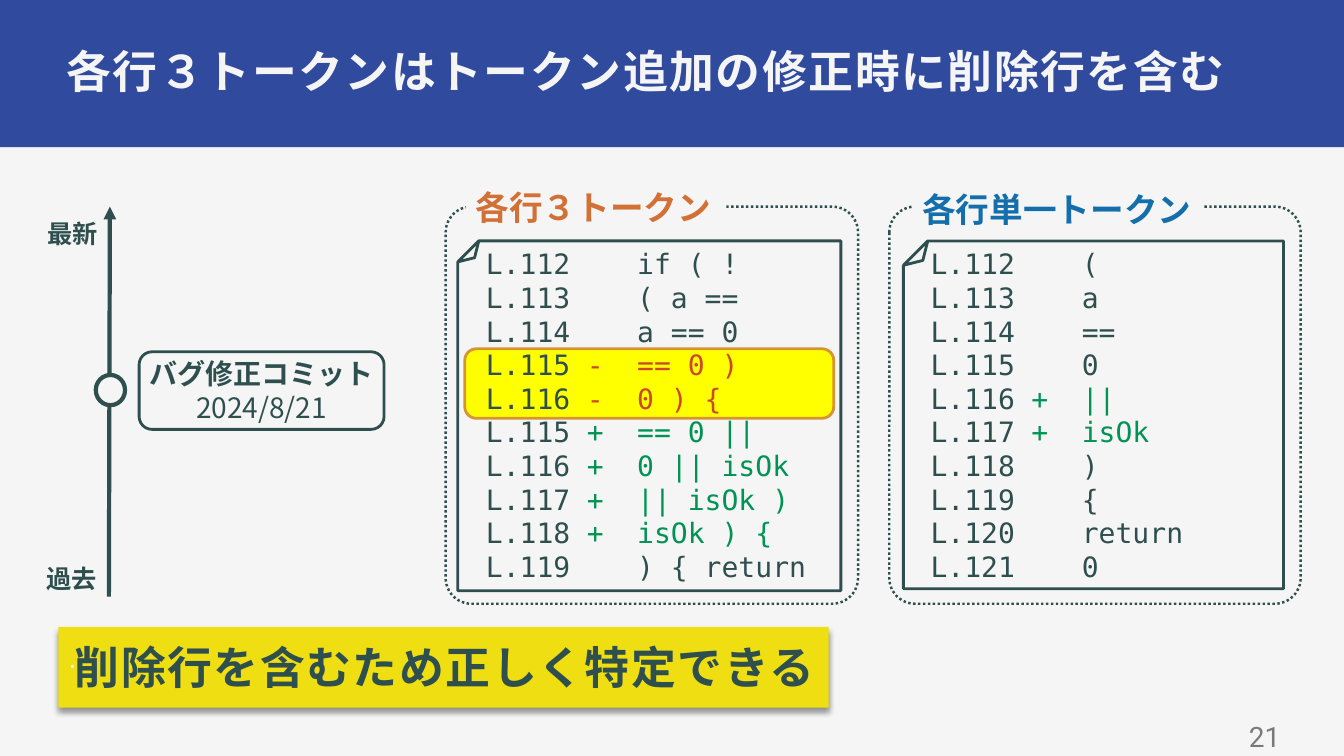
"""Build the slide comparing three-token lines with single-token lines in a bug-fix commit."""
from dataclasses import dataclass

from lxml import etree
from pptx import Presentation
from pptx.dml.color import RGBColor
from pptx.enum.dml import MSO_LINE_DASH_STYLE as Dash
from pptx.enum.shapes import MSO_CONNECTOR as Conn, MSO_SHAPE as Kind
from pptx.enum.text import MSO_ANCHOR as Anchor, MSO_AUTO_SIZE as AutoSize, PP_ALIGN as Align
from pptx.oxml.ns import qn
from pptx.util import Pt

PX = 9144
Box = tuple[int, int, int, int]


@dataclass(frozen=True)
class Theme:
    paper: str = "F5F5F5"
    ink: str = "2F4F4F"
    banner: str = "304A9E"
    note: str = "EEDE12"
    mark: str = "FFFF00"
    mark_line: str = "D59533"
    removed: str = "CB4828"
    added: str = "009353"
    orange: str = "D27136"
    blue: str = "136EAB"
    gray: str = "7A7A7A"
    sans: str = "Roboto"
    cjk: str = "Noto Sans CJK JP"
    mono: str = "DejaVu Sans Mono"
    heading: int = 32
    label: int = 24
    code: int = 20
    small: int = 18
    tracking: int = 110


T = Theme()
SIGN_COLORS = {"": T.ink, "-": T.removed, "+": T.added}


@dataclass(frozen=True)
class Line:
    number: int
    code: str
    sign: str = ""


@dataclass(frozen=True)
class Panel:
    title: str
    color: str
    title_box: Box
    frame: Box
    page: Box
    fold: float
    code_box: Box
    lines: tuple[Line, ...]


PANELS = (
    Panel("各行３トークン", T.orange, (462, 181, 256, 50), (442, 205, 409, 394),
          (454, 239, 380, 347), 0.06, (455, 240, 366, 347), (
              Line(112, "if ( !"), Line(113, "( a =="), Line(114, "a == 0"),
              Line(115, "== 0 )", "-"), Line(116, "0 ) {", "-"),
              Line(115, "== 0 ||", "+"), Line(116, "0 || isOk", "+"),
              Line(117, "|| isOk )", "+"), Line(118, "isOk ) {", "+"),
              Line(119, ") { return"))),
    Panel("各行単一トークン", T.blue, (905, 183, 289, 50), (882, 205, 408, 394),
          (896, 239, 377, 345), 0.07, (896, 240, 370, 347), (
              Line(112, "("), Line(113, "a"), Line(114, "=="), Line(115, "0"),
              Line(116, "||", "+"), Line(117, "isOk", "+"), Line(118, ")"),
              Line(119, "{"), Line(120, "return"), Line(121, "0"))),
)
TIMES = (("最新", (37, 212, 71, 40)), ("過去", (36, 554, 71, 40)))


def rgb(color: str) -> RGBColor:
    return RGBColor.from_string(color)


def emu(box: Box) -> list[int]:
    return [v * PX for v in box]


def sub(parent, tag: str, **attrs):
    return etree.SubElement(parent, qn(tag), {k: str(v) for k, v in attrs.items()})


def add_run(p, text: str, *, size: int, color: str = T.ink, font: str = T.cjk,
            bold: bool = False, tracking: int = 0) -> None:
    r = p.add_run()
    r.text = text
    r.font.size, r.font.bold, r.font.name = Pt(size), bold, font
    r.font.color.rgb = rgb(color)
    rPr = r._r.get_or_add_rPr()
    sub(rPr, "a:ea", typeface=T.cjk)
    if tracking:
        rPr.set("spc", str(tracking))


def frame_text(sp, *, inset: Box = (10, 5, 10, 5), wrap: bool = True, anchor=Anchor.TOP):
    tf = sp.text_frame
    tf.auto_size, tf.word_wrap, tf.vertical_anchor = AutoSize.NONE, wrap, anchor
    tf.margin_left, tf.margin_top, tf.margin_right, tf.margin_bottom = emu(inset)
    return tf


def add_shape(s, kind, box: Box, *, fill: str = "", line: str = "", width: float = 2,
              adj: float | None = None):
    sp = s.shapes.add_shape(kind, *emu(box))
    sp.shadow.inherit = False
    if fill:
        sp.fill.solid()
        sp.fill.fore_color.rgb = rgb(fill)
    else:
        sp.fill.background()
    if line:
        sp.line.color.rgb, sp.line.width = rgb(line), Pt(width)
    else:
        sp.line.fill.background()
    if adj is not None:
        geom = sp._element.spPr.find(qn("a:prstGeom"))
        for guides in geom.findall(qn("a:avLst")):
            geom.remove(guides)
        sub(sub(geom, "a:avLst"), "a:gd", name="adj", fmla=f"val {round(adj * 100000)}")
    return sp


def place(ph, box: Box, inset: Box):
    ph.left, ph.top, ph.width, ph.height = emu(box)
    ph._element.getparent().append(ph._element)
    tf = frame_text(ph, inset=inset, anchor=Anchor.MIDDLE)
    p = tf.paragraphs[0]
    p.alignment, p.space_before = Align.LEFT, Pt(0)
    return p


def draw_code(s, panel: Panel) -> None:
    tf = frame_text(s.shapes.add_textbox(*emu(panel.code_box)), inset=(27, 5, 10, 5))
    for i, line in enumerate(panel.lines):
        p = tf.paragraphs[0] if i == 0 else tf.add_paragraph()
        p.line_spacing = Pt(24)
        tabs = sub(p._p.get_or_add_pPr(), "a:tabLst")
        for stop in (100, 150):
            sub(tabs, "a:tab", pos=stop * PX, algn="l")
        add_run(p, f"L.{line.number}\t", size=T.code, font=T.mono)
        add_run(p, f"{line.sign}\t{line.code}", size=T.code, font=T.mono,
                color=SIGN_COLORS[line.sign])


def draw_panel(s, panel: Panel) -> None:
    page = add_shape(s, Kind.FOLDED_CORNER, panel.page, line=T.ink, adj=panel.fold)
    page.rotation = 180
    draw_code(s, panel)
    frame = add_shape(s, Kind.ROUNDED_RECTANGLE, panel.frame, line=T.ink, width=1.75, adj=0.065)
    frame.line.dash_style = Dash.ROUND_DOT
    label = add_shape(s, Kind.RECTANGLE, panel.title_box, fill=T.paper)
    p = frame_text(label, wrap=False).paragraphs[0]
    p.alignment = Align.LEFT
    add_run(p, panel.title, size=T.label, color=panel.color, bold=True)


def draw_timeline(s) -> None:
    axis = s.shapes.add_connector(Conn.STRAIGHT, *emu((108, 592, 109, 205)))
    axis.line.color.rgb, axis.line.width = rgb(T.ink), Pt(3)
    spPr = axis._element.spPr
    sub(spPr.find(qn("a:ln")), "a:tailEnd", type="triangle")
    sub(spPr, "a:effectLst")
    commit = add_shape(s, Kind.ROUNDED_RECTANGLE, (138, 349, 243, 77), line=T.ink)
    tf = frame_text(commit, inset=(8, 8, 8, 8), wrap=False, anchor=Anchor.MIDDLE)
    for p, text, bold in ((tf.paragraphs[0], "バグ修正コミット", True),
                          (tf.add_paragraph(), "2024/8/21", False)):
        p.alignment = Align.CENTER
        add_run(p, text, size=T.code, bold=bold)
    add_shape(s, Kind.OVAL, (95, 372, 29, 30), fill=T.paper, line=T.ink, width=3)
    for text, box in TIMES:
        tf = frame_text(s.shapes.add_textbox(*emu(box)), wrap=False)
        add_run(tf.paragraphs[0], text, size=T.small, bold=True)


def draw_conclusion(s) -> None:
    note = add_shape(s, Kind.RECTANGLE, (58, 622, 764, 80), fill=T.note)
    shadow = sub(note._element.spPr.find(qn("a:effectLst")), "a:outerShdw",
                 blurRad=Pt(4), dist=Pt(3), dir=5400000, rotWithShape=0)
    sub(sub(shadow, "a:srgbClr", val="000000"), "a:alpha", val=40000)
    p = place(s.placeholders[1], (64, 637, 906, 49), (6, 6, 6, 6))
    pPr = p._p.get_or_add_pPr()
    pPr.set("marL", str(4 * PX))
    pPr.set("indent", str(-4 * PX))
    sub(sub(pPr, "a:buClr"), "a:srgbClr", val=T.paper)
    sub(pPr, "a:buSzPct", val=25000)
    sub(pPr, "a:buChar", char="•")
    add_run(p, "削除行を含むため正しく特定できる", size=T.heading, font=T.sans, bold=True,
            tracking=T.tracking)


def main() -> None:
    prs = Presentation()
    prs.slide_width, prs.slide_height = 1333 * PX, 750 * PX
    s = prs.slides.add_slide(prs.slide_layouts[1])
    s.background.fill.solid()
    s.background.fill.fore_color.rgb = rgb(T.paper)
    add_shape(s, Kind.RECTANGLE, (-3, -2, 1339, 148), fill=T.banner)
    p = place(s.shapes.title, (58, 43, 1218, 59), (8, 8, 8, 6))
    p.line_spacing = 0.9
    add_run(p, "各行３トークンはトークン追加の修正時に削除行を含む", size=T.heading,
            color=T.paper, font=T.sans, bold=True, tracking=T.tracking)
    add_shape(s, Kind.ROUNDED_RECTANGLE, (461, 346, 366, 69), fill=T.mark, line=T.mark_line)
    for panel in PANELS:
        draw_panel(s, panel)
    draw_timeline(s)
    draw_conclusion(s)
    number = s.shapes.add_textbox(*emu((976, 711, 300, 39)))
    p = frame_text(number, inset=(6, 6, 6, 6), anchor=Anchor.MIDDLE).paragraphs[0]
    p.alignment = Align.RIGHT
    add_run(p, "21", size=T.code, color=T.gray, font=T.sans)
    prs.save("out.pptx")


if __name__ == "__main__":
    main()
